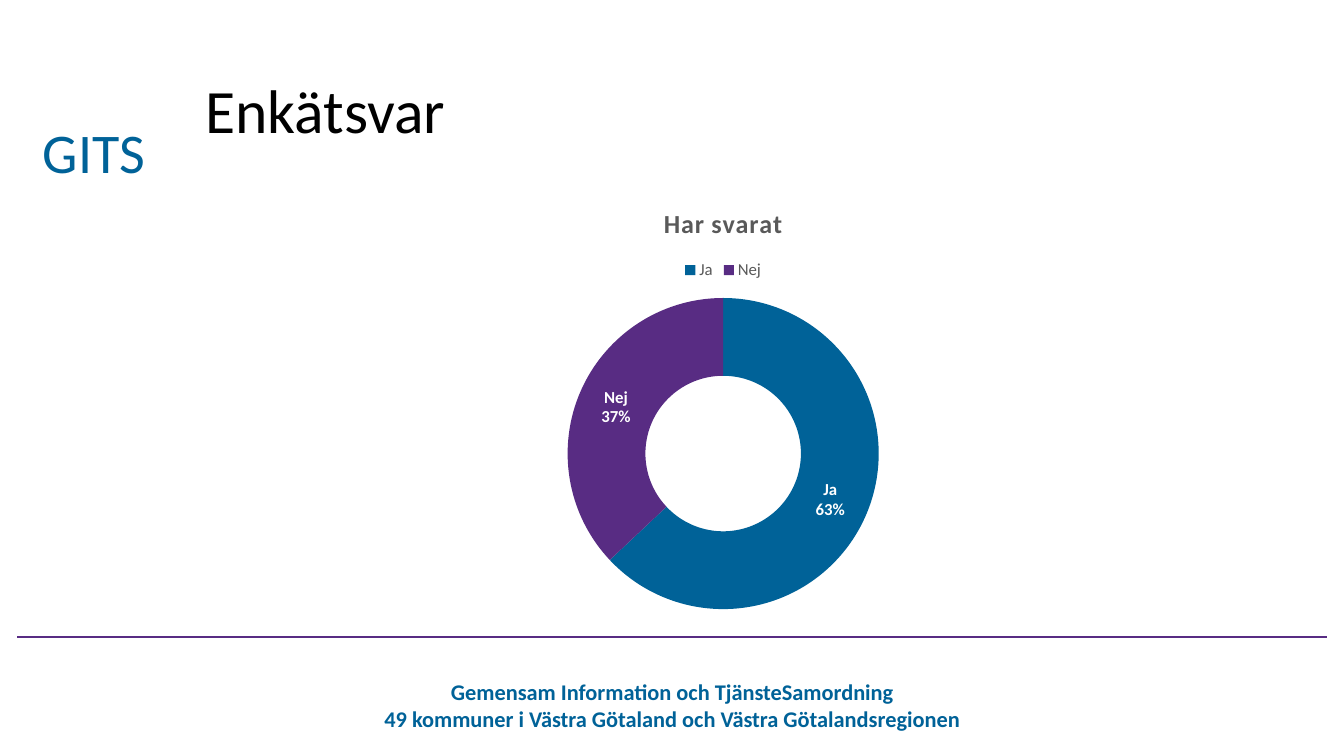
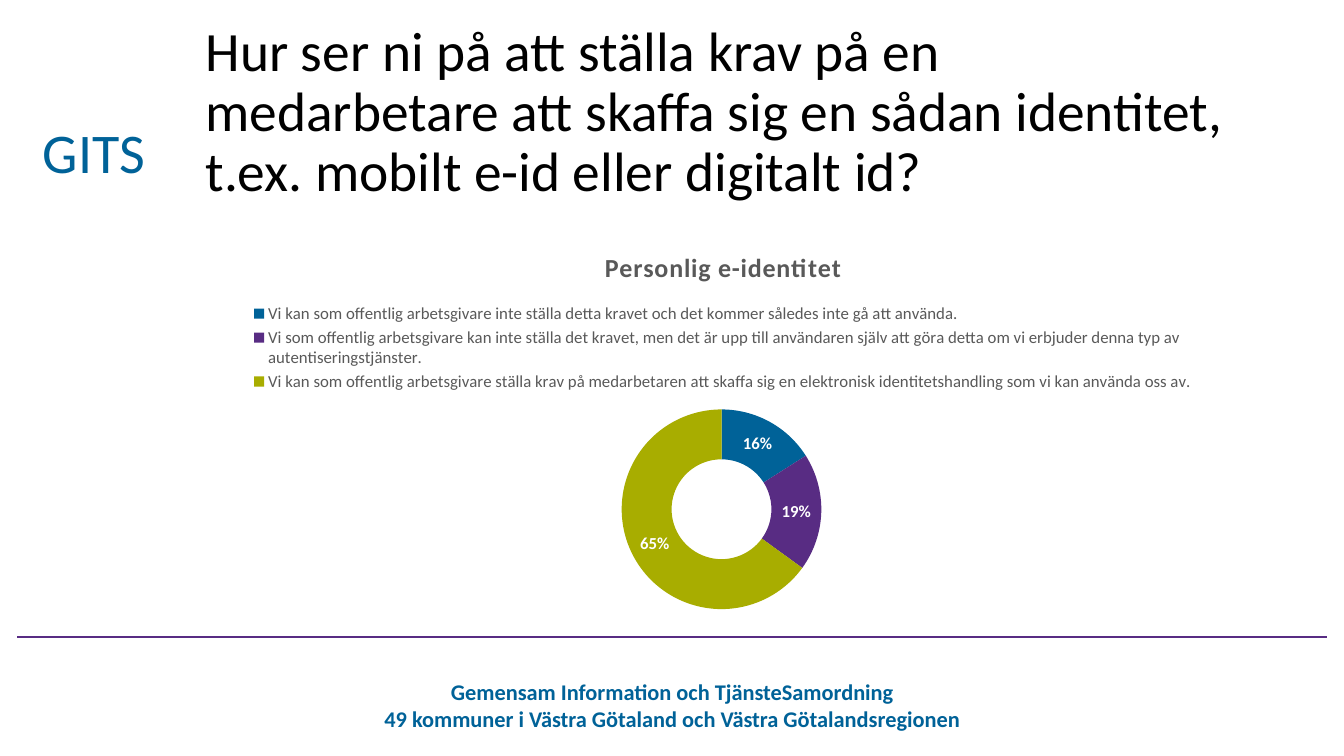
from lxml import etree
from pptx import Presentation
from pptx import util as u
from pptx.chart.data import CategoryChartData
from pptx.dml.color import RGBColor
from pptx.enum import chart as ch, shapes, text
from pptx.oxml import ns

Cm, Pt = u.Cm, u.Pt
BLUE = RGBColor(0x00, 0x62, 0x98)
PLUM = RGBColor(0x58, 0x2C, 0x83)
LIME = RGBColor(0xA8, 0xAD, 0x00)
GREY = RGBColor(0x59, 0x59, 0x59)
BLACK = RGBColor(0, 0, 0)
WHITE = RGBColor(255, 255, 255)
FACE = "Calibri"
LEFT, WIDTH, BASE = 4.93, 26.59, 15.7  # content column and chart bottom, cm
FOOT = ("Gemensam Information och TjänsteSamordning\n"
        "49 kommuner i Västra Götaland och Västra Götalandsregionen")


def style(font, size, color, bold=False):
    font.name, font.size, font.bold = FACE, Pt(size), bold
    font.color.rgb = color


def write(slide, box, words, size, color, bold=False, align=text.PP_ALIGN.CENTER):
    frame = slide.shapes.add_textbox(*map(Cm, box)).text_frame
    frame.word_wrap = True
    frame.text = words
    for para in frame.paragraphs:
        para.alignment = align
        style(para.runs[0].font, size, color, bold)
    return frame


# Title, title size, chart title, chart top, label with name, answers
pages = [
    ("Enkätsvar", 44, "Har svarat", 4.7, True, {"Ja": 63, "Nej": 37}),
    ("Hur ser ni på att ställa krav på en medarbetare att skaffa sig en sådan "
     "identitet, t.ex. mobilt e-id eller digitalt id?",
     39.6, "Personlig e-identitet", 5.82, False, {
         "Vi kan som offentlig arbetsgivare inte ställa detta kravet och det "
         "kommer således inte gå att använda.": 16,
         "Vi som offentlig arbetsgivare kan inte ställa det kravet, men det är "
         "upp till användaren själv att göra detta om vi erbjuder denna typ av "
         "autentiseringstjänster.": 19,
         "Vi kan som offentlig arbetsgivare ställa krav på medarbetaren att "
         "skaffa sig en elektronisk identitetshandling som vi kan använda "
         "oss av.": 65}),
]

deck = Presentation()
deck.slide_width, deck.slide_height = Cm(33.87), Cm(19.05)

for title, size, head, top, named, answers in pages:
    slide = deck.slides.add_slide(deck.slide_layouts[6])

    # Shared frame: footer, mark and rule
    write(slide, (8.08, 16.97, 17.73, 1.63), FOOT, 16, BLUE, True)
    mark = write(slide, (0.79, 2.84, 3.15, 1.96), "GITS", 40, BLUE)
    mark.word_wrap = False
    rule = slide.shapes.add_connector(
        shapes.MSO_CONNECTOR.STRAIGHT, Cm(0.43), Cm(16.05), Cm(33.45), Cm(16.05))
    rule.line.color.rgb, rule.line.width = PLUM, Pt(1)
    etree.SubElement(rule._element.spPr, ns.qn("a:effectLst"))

    # Title
    frame = write(slide, (LEFT, 1.02, WIDTH, 3.68), title, size, BLACK,
                  align=text.PP_ALIGN.LEFT)
    frame.vertical_anchor = text.MSO_ANCHOR.MIDDLE
    frame.paragraphs[0].line_spacing = 0.9

    # Doughnut chart
    data = CategoryChartData()
    data.categories = list(answers)
    data.add_series(head, list(answers.values()))
    chart = slide.shapes.add_chart(
        ch.XL_CHART_TYPE.DOUGHNUT, Cm(LEFT), Cm(top), Cm(WIDTH), Cm(BASE - top),
        data).chart
    style(chart.font, 10, BLACK)

    chart.has_title = True
    chart.chart_title.include_in_layout = False
    chart.chart_title.text_frame.text = head
    run = chart.chart_title.text_frame.paragraphs[0].runs[0]
    style(run.font, 18.6, GREY, True)
    run._r.get_or_add_rPr().set("spc", "50")  # letter spacing

    chart.has_legend = True
    chart.legend.position = ch.XL_LEGEND_POSITION.TOP
    chart.legend.include_in_layout = False
    style(chart.legend.font, 12, GREY)

    plot = chart.plots[0]
    plot.vary_by_categories = True
    for i, color in zip(range(len(answers)), (BLUE, PLUM, LIME)):
        fill = plot.series[0].points[i].format.fill
        fill.solid()
        fill.fore_color.rgb = color

    # Percent labels, with the answer on its own line where named
    labels = plot.series[0].data_labels
    style(labels.font, 12, WHITE, True)
    labels.number_format, labels.number_format_is_linked = "0%", False
    labels.show_value, labels.show_percentage = False, True
    labels.show_category_name = named
    if named:
        gap = etree.Element(ns.qn("c:separator"))
        gap.text = "\n"
        labels._element.find(ns.qn("c:showBubbleSize")).addnext(gap)

deck.save("out.pptx")
